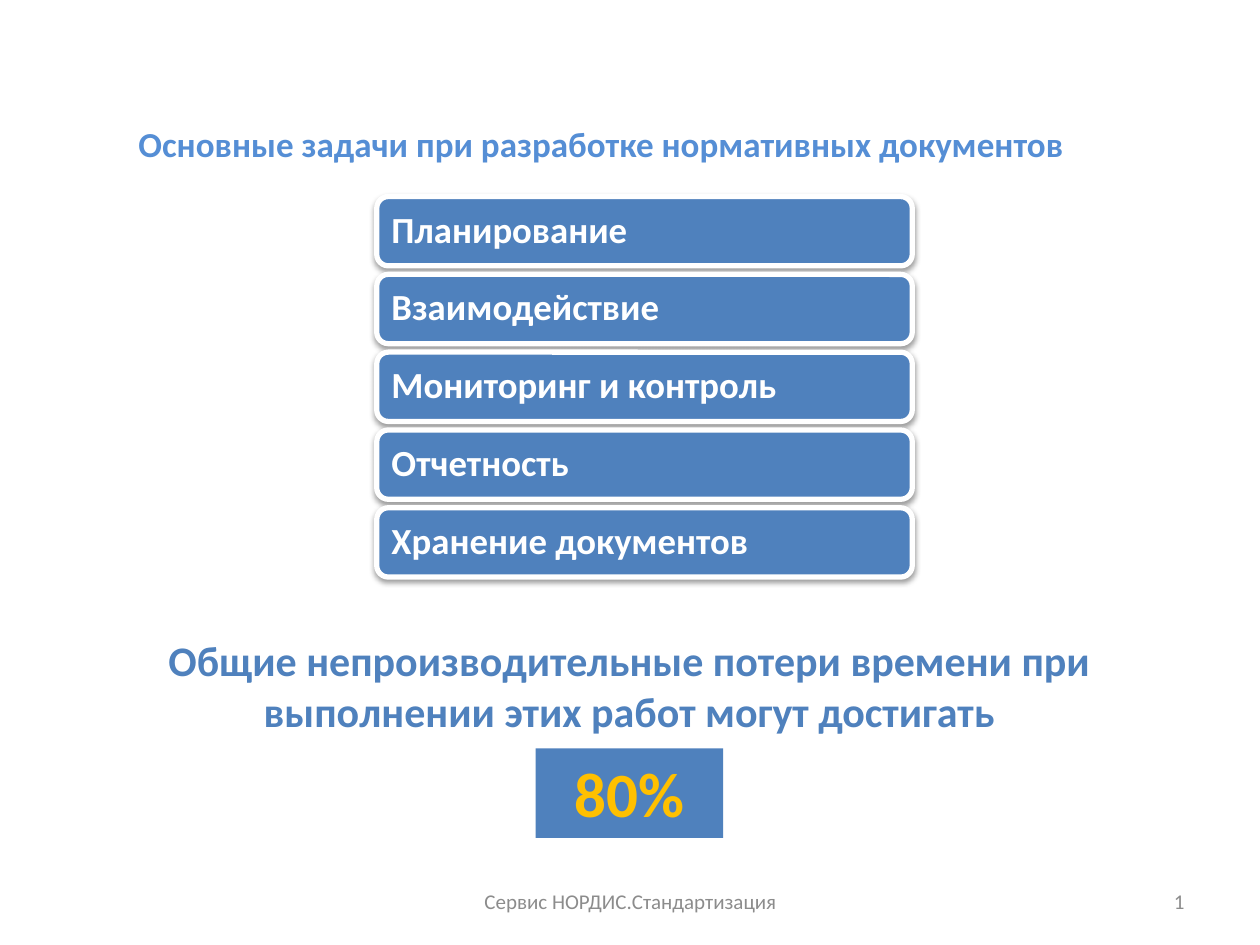
from lxml.etree import fromstring
from pptx import Presentation
from pptx.dml.color import RGBColor
from pptx.enum.shapes import MSO_SHAPE as Shape
from pptx.enum.text import MSO_ANCHOR as Anchor, PP_ALIGN as Align
from pptx.util import Inches, Pt

WIDE, HIGH = Inches(10), Inches(7.5)
BLUE = RGBColor(0x4F, 0x81, 0xBD)
SKY = RGBColor(0x55, 0x8E, 0xD5)
GOLD = RGBColor(0xFF, 0xC0, 0x00)
GRAY = RGBColor(0x8C, 0x8C, 0x8C)
WHITE = RGBColor(0xFF, 0xFF, 0xFF)

TASKS = ["Планирование", "Взаимодействие", "Мониторинг и контроль",
         "Отчетность", "Хранение документов"]
LEFT, TOP, STEP = 2.99, 1.56, 0.6175

SHADOW = f"""
<a:effectLst xmlns:a="http://schemas.openxmlformats.org/drawingml/2006/main">
  <a:outerShdw blurRad="{Pt(3.1)}" dist="{Pt(1.6)}" dir="5400000" rotWithShape="0">
    <a:srgbClr val="000000"><a:alpha val="38000"/></a:srgbClr>
  </a:outerShdw>
</a:effectLst>"""


def write(shape, text, size, color, align=Align.LEFT, bold=True, anchor=Anchor.TOP):
    frame = shape.text_frame
    frame.word_wrap = True
    frame.vertical_anchor = anchor
    par = frame.paragraphs[0]
    par.text = text
    par.alignment = align
    font = par.font
    font.name, font.size, font.bold = "Calibri", Pt(size), bold
    font.color.rgb = color
    return frame


def label(slide, area, *args, **style):
    box = slide.shapes.add_textbox(*map(Inches, area))
    write(box, *args, **style)


def panel(shapes, kind, area):
    """Add a flat blue shape without a line."""
    shape = shapes.add_shape(kind, *map(Inches, area))
    shape.shadow.inherit = False
    shape.fill.solid()
    shape.fill.fore_color.rgb = BLUE
    shape.line.fill.background()
    return shape


def task(shapes, row, text):
    bar = panel(shapes, Shape.ROUNDED_RECTANGLE,
                (LEFT, TOP + row * STEP, 4.25, 0.55))
    bar.line.color.rgb = WHITE
    bar.line.width = Pt(3)
    props = bar.element.spPr
    flat = props.find("{*}effectLst")
    props.replace(flat, fromstring(SHADOW))
    frame = write(bar, text, 21, WHITE, anchor=Anchor.MIDDLE)
    frame.margin_left = frame.margin_right = Inches(0.09)
    frame.margin_top = frame.margin_bottom = 0
    frame.paragraphs[0].line_spacing = 0.9


def main():
    deck = Presentation()
    deck.slide_width, deck.slide_height = WIDE, HIGH
    slide = deck.slides.add_slide(deck.slide_layouts[6])

    label(slide, (1, 0.92, 8.25, 0.44),
          "Основные задачи при разработке нормативных документов", 20, SKY)
    label(slide, (0.83, 4.99, 8.33, 0.91),
          "Общие непроизводительные потери времени при "
          "выполнении этих работ могут достигать", 24, BLUE, Align.CENTER)
    share = panel(slide.shapes, Shape.RECTANGLE, (4.25, 5.94, 1.49, 0.71))
    write(share, "80%", 36, GOLD, Align.CENTER)

    group = slide.shapes.add_group_shape()
    for row, text in enumerate(TASKS):
        task(group.shapes, row, text)

    foot = {"bold": False, "anchor": Anchor.MIDDLE}
    label(slide, (3.42, 6.95, 3.17, 0.4), "Сервис НОРДИС.Стандартизация",
          12, GRAY, Align.CENTER, **foot)
    label(slide, (7.17, 6.95, 2.33, 0.4), "1", 12, GRAY, Align.RIGHT, **foot)
    deck.save("out.pptx")


if __name__ == "__main__":
    main()
